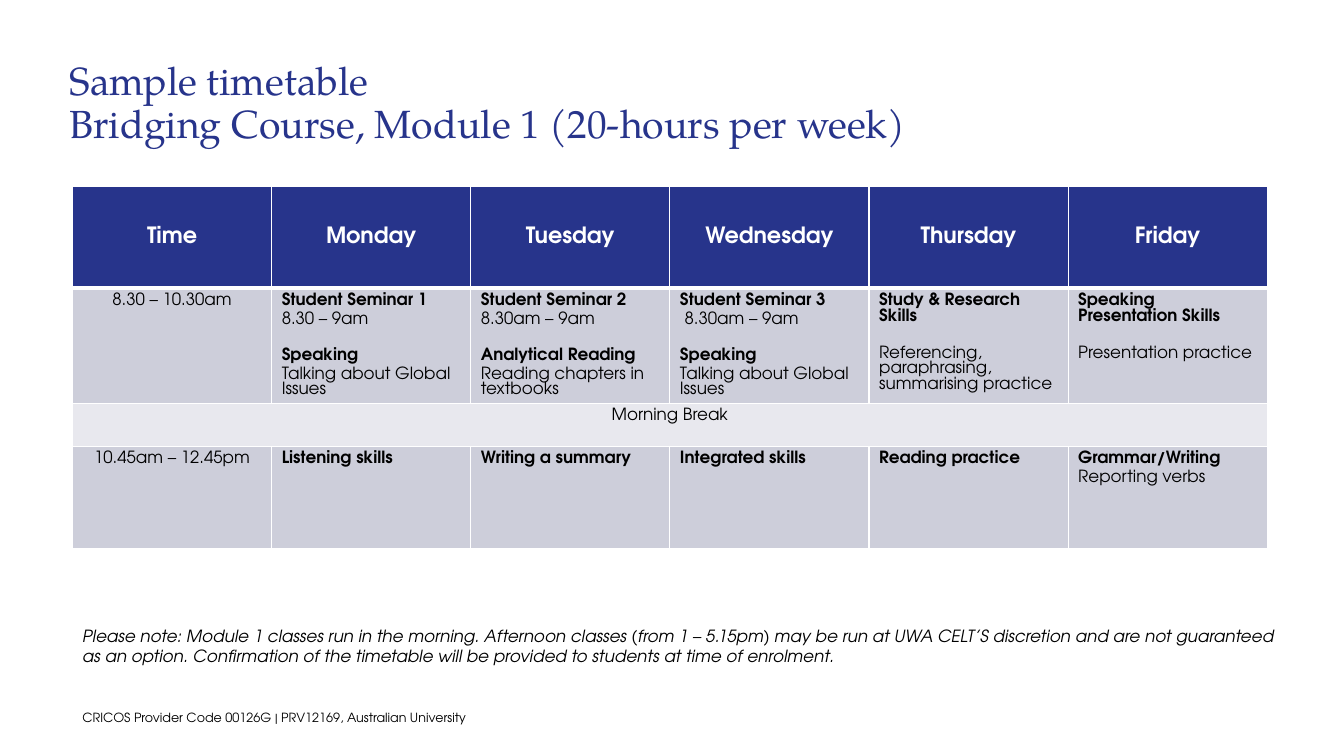
from dataclasses import dataclass

from lxml import etree
from pptx import Presentation
from pptx.dml.color import RGBColor
from pptx.enum.text import MSO_ANCHOR, MSO_AUTO_SIZE, PP_ALIGN
from pptx.oxml.ns import qn
from pptx.util import Inches, Pt

LEFT, CENTER = PP_ALIGN.LEFT, PP_ALIGN.CENTER
TOP, MIDDLE = MSO_ANCHOR.TOP, MSO_ANCHOR.MIDDLE
NO_AUTOFIT = MSO_AUTO_SIZE.NONE

NAVY = RGBColor(0x27, 0x34, 0x8B)
LAVENDER = RGBColor(0xCD, 0xCE, 0xDA)
PALE = RGBColor(0xE8, 0xE8, 0xEE)
WHITE = RGBColor(0xFF, 0xFF, 0xFF)
BLACK = RGBColor(0, 0, 0)
SERIF, SANS = "TeX Gyre Pagella", "TeX Gyre Adventor"

SLIDE_WIDTH, SLIDE_HEIGHT = Inches(13.33), Inches(7.5)
SESSION_GAP = 14  # points between two parts of one session


@dataclass(frozen=True)
class Area:
    """A rectangle in percent of the slide's width and height."""
    left: float
    top: float
    width: float
    height: float

    def lengths(self) -> tuple[int, int, int, int]:
        return (across(self.left), down(self.top),
                across(self.width), down(self.height))


@dataclass(frozen=True)
class Line:
    text: str
    bold: bool = False
    before: float = 1


@dataclass(frozen=True)
class Note:
    text: str
    area: Area
    size: float
    italic: bool = False


def across(percent: float) -> int:
    return round(SLIDE_WIDTH * percent / 100)


def down(percent: float) -> int:
    return round(SLIDE_HEIGHT * percent / 100)


def session(name: str, detail: str = "", gap: float = 1) -> list[Line]:
    lines = [Line(name, True, SESSION_GAP)]
    return lines + [Line(detail, False, gap)] if detail else lines


TITLE_AREA = Area(2.85, 5, 71.42, 14.53)
TABLE_AREA = Area(5.4, 24.67, 88.9, 47.87)
ROW_HEIGHTS = (13.47, 15.2, 5.73, 13.47)
TITLE_LINES = ("Sample timetable",
               "Bridging Course, Module 1 (20-hours per week)")
HEADINGS = ("Time", "Monday", "Tuesday", "Wednesday", "Thursday", "Friday")
GLOBAL_ISSUES = session("Speaking", "Talking about Global Issues")
EARLY = [
    [Line("8.30 – 10.30am")],
    session("Student Seminar 1", "8.30 – 9am") + GLOBAL_ISSUES,
    session("Student Seminar 2", "8.30am – 9am")
    + session("Analytical Reading", "Reading chapters in textbooks"),
    session("Student Seminar 3", " 8.30am – 9am") + GLOBAL_ISSUES,
    session("Study & Research Skills",
            "Referencing, paraphrasing, summarising practice", SESSION_GAP),
    session("Speaking Presentation Skills", "Presentation practice", SESSION_GAP),
]
LATE = [
    [Line("10.45am – 12.45pm")],
    session("Listening skills"),
    session("Writing a summary"),
    session("Integrated skills"),
    session("Reading practice"),
    session("Grammar/Writing", "Reporting verbs"),
]
NOTES = (
    Note("Please note: Module 1 classes run in the morning. Afternoon classes "
         "(from 1 – 5.15pm) may be run at UWA CELT’S discretion and are not "
         "guaranteed as an option. Confirmation of the timetable will be "
         "provided to students at time of enrolment.",
         Area(5.4, 82.05, 91, 6.67), 12, True),
    Note("CRICOS Provider Code 00126G | PRV12169, Australian University",
         Area(5.4, 93.27, 50, 3.33), 9),
)


def add_run(paragraph, text: str, font: str, size: float, color: RGBColor,
            bold: bool = False, italic: bool = False) -> None:
    run = paragraph.add_run()
    run.text = text
    run.font.name, run.font.size = font, Pt(size)
    run.font.bold, run.font.italic = bold, italic
    run.font.color.rgb = color


def set_borders(cell, top: float, bottom: float) -> None:
    properties = cell._tc.get_or_add_tcPr()
    widths = {"a:lnL": 1, "a:lnR": 1, "a:lnT": top, "a:lnB": bottom}
    for position, (tag, width) in enumerate(widths.items()):
        border = etree.Element(qn(tag), w=str(Pt(width)))
        fill = etree.SubElement(border, qn("a:solidFill"))
        etree.SubElement(fill, qn("a:srgbClr"), val=str(WHITE))
        properties.insert(position, border)


def style_cell(cell, fill: RGBColor, top: float = 1, bottom: float = 1) -> None:
    cell.fill.solid()
    cell.fill.fore_color.rgb = fill
    set_borders(cell, top, bottom)


def fill_body_cell(cell, lines: list[Line], align) -> None:
    frame = cell.text_frame
    for index, line in enumerate(lines):
        paragraph = frame.add_paragraph() if index else frame.paragraphs[0]
        paragraph.alignment = align
        paragraph.space_before = Pt(line.before if index else 0)
        paragraph.space_after = Pt(1)
        add_run(paragraph, line.text, SANS, 12, BLACK, line.bold)


def add_title(slide) -> None:
    title = slide.shapes.title
    title.left, title.top, title.width, title.height = TITLE_AREA.lengths()
    title.fill.solid()
    title.fill.fore_color.rgb = WHITE
    frame = title.text_frame
    frame.auto_size, frame.word_wrap = NO_AUTOFIT, True
    frame.vertical_anchor = TOP
    frame.margin_left, frame.margin_top = Inches(0.31), Inches(0.24)
    frame.margin_right = frame.margin_bottom = Inches(0.28)
    paragraph = frame.paragraphs[0]
    paragraph.alignment, paragraph.line_spacing = LEFT, 0.9
    paragraph.space_before = Pt(0)
    for index, text in enumerate(TITLE_LINES):
        if index:
            paragraph.add_line_break()
        add_run(paragraph, text, SERIF, 28, NAVY)


def add_timetable(slide) -> None:
    table = slide.shapes.add_table(
        len(ROW_HEIGHTS), len(HEADINGS), *TABLE_AREA.lengths()).table
    for row, height in zip(table.rows, ROW_HEIGHTS):
        row.height = down(height)

    # Heading row
    for column, heading in enumerate(HEADINGS):
        cell = table.cell(0, column)
        style_cell(cell, NAVY, bottom=3)
        cell.vertical_anchor = MIDDLE
        paragraph = cell.text_frame.paragraphs[0]
        paragraph.alignment = CENTER
        add_run(paragraph, heading, SANS, 16, WHITE, bold=True)

    # Sessions before and after the break
    for row, sessions in ((1, EARLY), (3, LATE)):
        for column, lines in enumerate(sessions):
            cell = table.cell(row, column)
            style_cell(cell, LAVENDER, top=3 if row == 1 else 1)
            fill_body_cell(cell, lines, LEFT if column else CENTER)

    # Break across all columns
    for column in range(len(HEADINGS)):
        style_cell(table.cell(2, column), PALE)
    break_cell = table.cell(2, 0)
    break_cell.merge(table.cell(2, len(HEADINGS) - 1))
    fill_body_cell(break_cell, [Line("Morning Break")], CENTER)


def add_note(slide, note: Note) -> None:
    frame = slide.shapes.add_textbox(*note.area.lengths()).text_frame
    frame.word_wrap = True
    add_run(frame.paragraphs[0], note.text, SANS, note.size, BLACK,
            italic=note.italic)


def main() -> None:
    presentation = Presentation()
    presentation.slide_width = SLIDE_WIDTH
    presentation.slide_height = SLIDE_HEIGHT
    slide = presentation.slides.add_slide(presentation.slide_layouts[5])
    add_title(slide)
    add_timetable(slide)
    for note in NOTES:
        add_note(slide, note)
    presentation.save("out.pptx")


if __name__ == "__main__":
    main()
